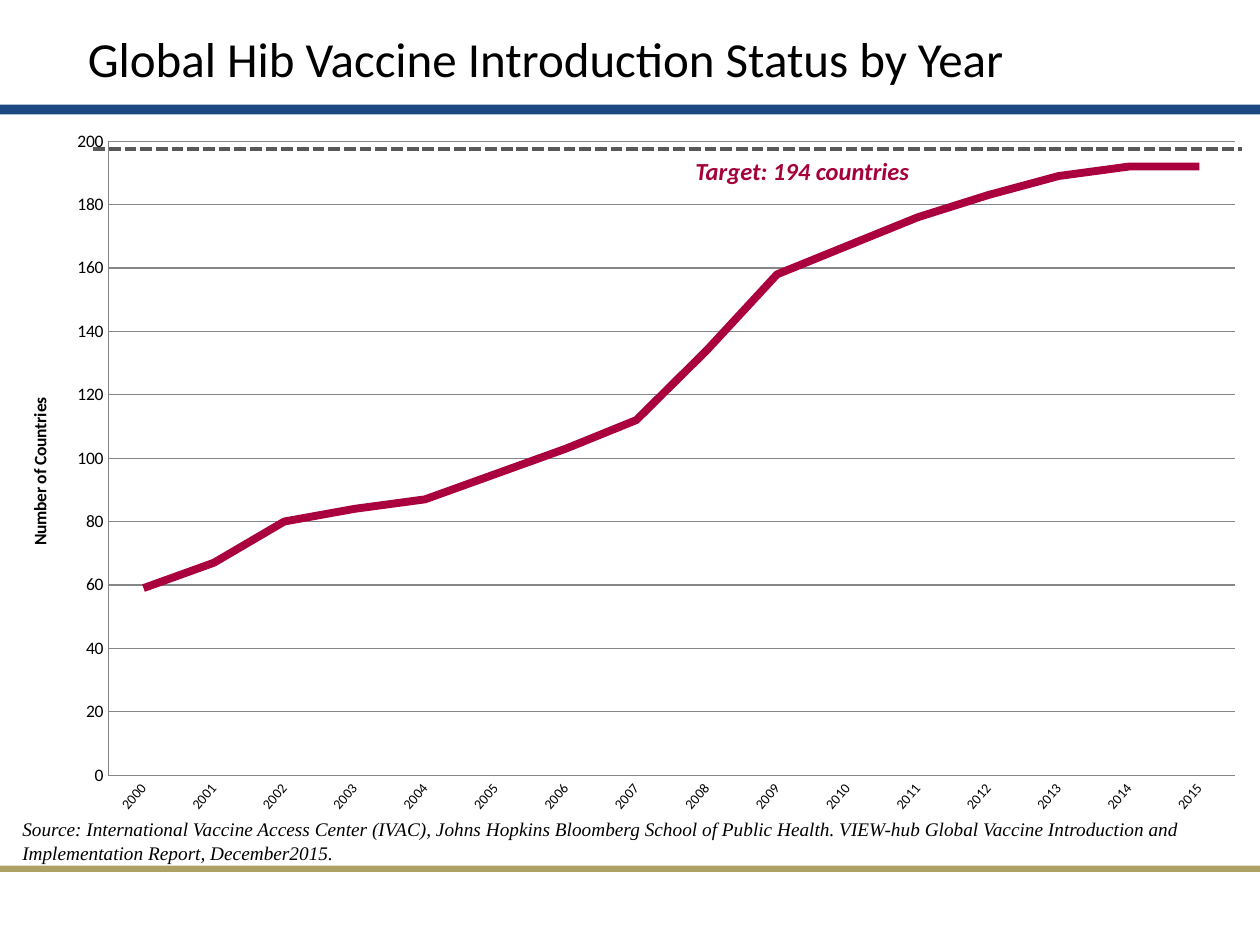
from lxml import etree
from pptx import Presentation, util as u
from pptx.chart.data import CategoryChartData
from pptx.dml.color import RGBColor
from pptx.enum import chart as c, dml, shapes, text
from pptx.oxml import parse_xml
from pptx.oxml.ns import nsdecls, qn

COLOURS = {
    "ink": "000000", "blue": "1C4982", "gold": "847013", "curve": "AB003E",
    "target": "A6003B", "dash": "595959", "grid": "868686",
}
COUNTRIES = [59, 67, 80, 84, 87, 95, 103, 112, 134, 158, 167, 176, 183, 189, 192, 192]
FIRST_YEAR = 2000


def colour(name):
    return RGBColor.from_string(COLOURS[name])


def manual_layout(**values):
    """Return a c:layout element; sizes are fractions of the chart."""
    inner = '<c:layoutTarget val="inner"/>' if "w" in values else ""
    modes = '<c:xMode val="edge"/><c:yMode val="edge"/>'
    places = "".join(f'<c:{key} val="{value}"/>' for key, value in values.items())
    return parse_xml(f'<c:layout {nsdecls("c")}><c:manualLayout>{inner}{modes}{places}'
                     "</c:manualLayout></c:layout>")


def replace_layout(parent, layout, before):
    for old in parent.findall(qn("c:layout")):
        parent.remove(old)
    parent.find(qn(before)).addprevious(layout)


class SlideBuilder:
    def __init__(self, slide, font="Calibri"):
        self.slide = slide
        self.font = font

    def style(self, font, ink="ink", **formats):
        for key, value in {"name": self.font, **formats}.items():
            setattr(font, key, value)
        font.color.rgb = colour(ink)

    def bar(self, top, height, fill, opacity=100):
        shape = self.slide.shapes.add_shape(
            shapes.MSO_SHAPE.RECTANGLE, 0, u.Cm(top), u.Cm(25.4), u.Cm(height))
        shape.shadow.inherit = False
        shape.line.fill.background()
        shape.fill.solid()
        shape.fill.fore_color.rgb = colour(fill)
        if opacity < 100:
            value = shape.fill._xPr.find(".//" + qn("a:srgbClr"))
            etree.SubElement(value, qn("a:alpha")).set("val", str(opacity * 1000))

    def text(self, words, left, top, width, height, **formats):
        box = self.slide.shapes.add_textbox(*map(u.Cm, (left, top, width, height)))
        box.text_frame.word_wrap = True
        box.text_frame.vertical_anchor = text.MSO_ANCHOR.TOP
        paragraph = box.text_frame.paragraphs[0]
        run = paragraph.add_run()
        run.text = words
        self.style(run.font, **formats)

    def dashed_line(self, left, right, height, ink, width):
        line = self.slide.shapes.add_connector(
            shapes.MSO_CONNECTOR.STRAIGHT, *map(u.Cm, (left, height, right, height)))
        etree.SubElement(line._element.spPr, qn("a:effectLst"))
        line.line.width = u.Pt(width)
        line.line.color.rgb = colour(ink)
        line.line.dash_style = dml.MSO_LINE.SQUARE_DOT

    def line_chart(self, categories, values, axis_title, left, top, width, height):
        data = CategoryChartData()
        data.categories = categories
        data.add_series("Series 1", values)
        chart = self.slide.shapes.add_chart(
            c.XL_CHART_TYPE.LINE, *map(u.Cm, (left, top, width, height)), data).chart
        chart.has_legend = chart.has_title = False
        self.style(chart.font, size=u.Pt(10))
        chart.plots[0].vary_by_categories = False
        series = chart.plots[0].series[0]
        series.smooth = False
        series.marker.style = c.XL_MARKER_STYLE.NONE
        series.format.line.width = u.Pt(4.5)
        series.format.line.color.rgb = colour("curve")

        years, counts = chart.category_axis, chart.value_axis
        for axis, size in ((years, 8), (counts, 10)):
            axis.major_tick_mark = axis.minor_tick_mark = c.XL_TICK_MARK.NONE
            self.style(axis.tick_labels.font, size=u.Pt(size))
            axis.format.line.color.rgb = colour("grid")
        years._element.find(qn("c:txPr")).find(qn("a:bodyPr")).set("rot", "-3000000")
        for key, value in {"minimum_scale": 0, "maximum_scale": 200, "major_unit": 20,
                           "has_major_gridlines": True}.items():
            setattr(counts, key, value)
        counts.major_gridlines.format.line.color.rgb = colour("grid")
        counts.major_gridlines.format.line.width = u.Pt(0.75)

        frame = counts.axis_title.text_frame
        run = frame.paragraphs[0].add_run()
        run.text = axis_title
        self.style(run.font, size=u.Pt(10), bold=True)
        frame._txBody.find(qn("a:bodyPr")).set("rot", "-5400000")
        replace_layout(counts.axis_title._element, manual_layout(x=0.02, y=0.39), "c:overlay")
        plot_area = chart._chartSpace.chart.plotArea
        replace_layout(plot_area, manual_layout(x=0.086, y=0.034, w=0.894, h=0.892),
                       "c:lineChart")


def main():
    presentation = Presentation()
    presentation.slide_width, presentation.slide_height = u.Cm(25.4), u.Cm(19.05)
    slide = presentation.slides.add_slide(presentation.slide_layouts[6])
    builder = SlideBuilder(slide)
    builder.bar(2.11, 0.2, "blue")
    builder.bar(17.45, 0.13, "gold", opacity=65)
    builder.text("Global Hib Vaccine Introduction Status by Year",
                 1.52, 0.46, 20.96, 2.34, size=u.Pt(28))
    builder.text("Source: International Vaccine Access Center (IVAC), Johns Hopkins Bloomberg "
                 "School of Public Health. VIEW-hub Global Vaccine Introduction and "
                 "Implementation Report, December2015.",
                 0.2, 16.36, 24.74, 1.19, name="Times New Roman", size=u.Pt(11), italic=True)
    years = [str(FIRST_YEAR + index) for index in range(len(COUNTRIES))]
    builder.line_chart(years, COUNTRIES, "Number of Countries", 0, 2.36, 25.4, 14.33)
    builder.dashed_line(1.88, 25.04, 3, "dash", 2.25)
    builder.text("Target: 194 countries", 13.77, 3.02, 6.53, 0.84,
                 ink="target", size=u.Pt(14), bold=True, italic=True)
    presentation.save("out.pptx")


if __name__ == "__main__":
    main()
